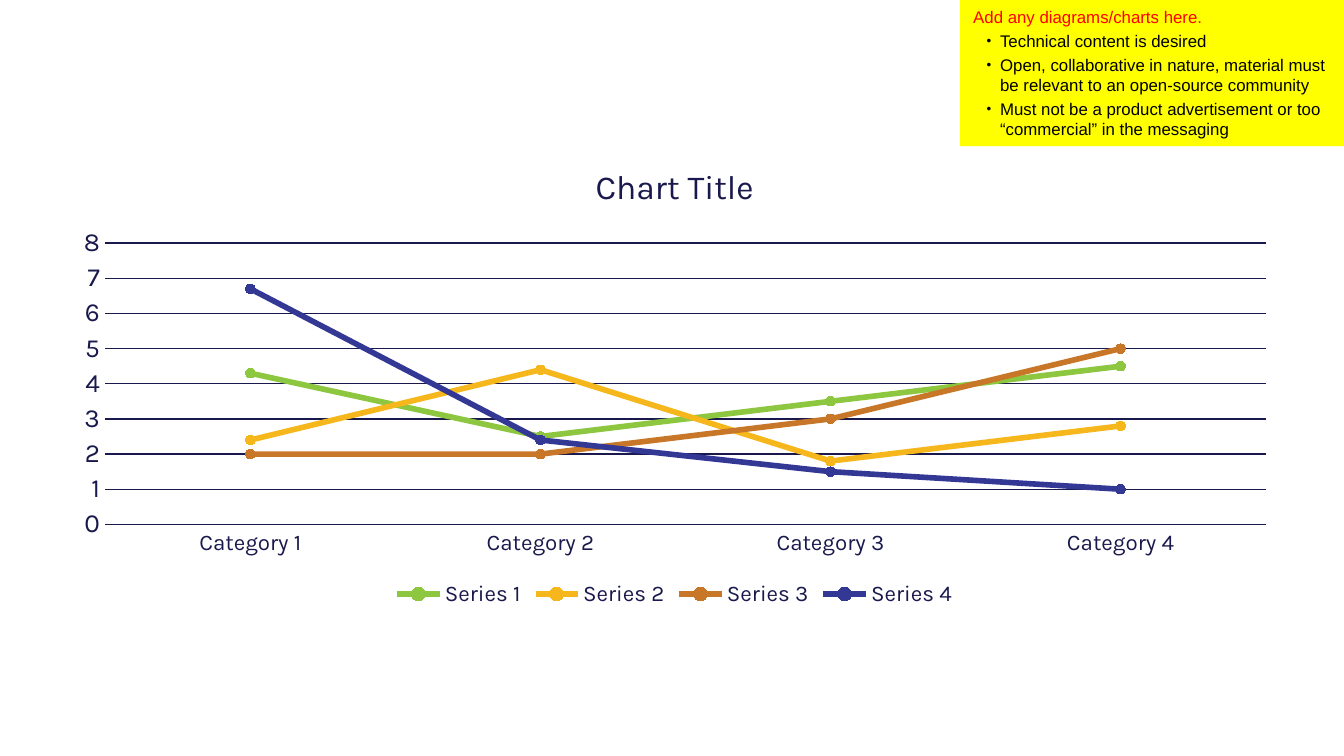
from lxml import etree
from pptx import Presentation
from pptx.chart.data import CategoryChartData
from pptx.dml.color import RGBColor
from pptx.enum.chart import XL_CHART_TYPE, XL_LEGEND_POSITION, XL_MARKER_STYLE, XL_TICK_MARK
from pptx.enum.shapes import MSO_SHAPE
from pptx.enum.text import MSO_ANCHOR, PP_ALIGN
from pptx.oxml.ns import qn
from pptx.util import Pt

LINE_MARKERS = XL_CHART_TYPE.LINE_MARKERS
LEGEND_BOTTOM = XL_LEGEND_POSITION.BOTTOM
CIRCLE = XL_MARKER_STYLE.CIRCLE
NO_TICK = XL_TICK_MARK.NONE
RECTANGLE = MSO_SHAPE.RECTANGLE
TOP = MSO_ANCHOR.TOP
LEFT = PP_ALIGN.LEFT

NAVY = RGBColor(0x19, 0x19, 0x4D)
GREEN = RGBColor(0x8D, 0xC6, 0x3F)
AMBER = RGBColor(0xF6, 0xB7, 0x1C)
COPPER = RGBColor(0xC8, 0x77, 0x28)
INDIGO = RGBColor(0x34, 0x38, 0x95)
YELLOW = RGBColor(0xFF, 0xFF, 0x00)
RED = RGBColor(0xFF, 0x00, 0x00)
BLACK = RGBColor(0x00, 0x00, 0x00)

CATEGORIES = ["Category 1", "Category 2", "Category 3", "Category 4"]
SERIES = [
    ("Series 1", (4.3, 2.5, 3.5, 4.5), GREEN),
    ("Series 2", (2.4, 4.4, 1.8, 2.8), AMBER),
    ("Series 3", (2, 2, 3, 5), COPPER),
    ("Series 4", (6.7, 2.4, 1.5, 1), INDIGO),
]
NOTE_HEADING = "Add any diagrams/charts here."
NOTE_BULLETS = [
    "Technical content is desired",
    "Open, collaborative in nature, material must be relevant to an open-source community",
    "Must not be a product advertisement or too “commercial” in the messaging",
]


def style_font(font, name, size, color):
    font.name = name
    font.size = Pt(size)
    font.bold = False
    font.color.rgb = color


def add_bullet(paragraph):
    properties = paragraph._p.get_or_add_pPr()
    properties.set("marL", str(Pt(14.4)))
    properties.set("indent", str(Pt(-7.2)))
    bullet_color = etree.SubElement(properties, qn("a:buClr"))
    etree.SubElement(bullet_color, qn("a:srgbClr"), val=str(BLACK))
    etree.SubElement(properties, qn("a:buSzPct"), val="80000")
    etree.SubElement(properties, qn("a:buFont"), typeface="Arial")
    etree.SubElement(properties, qn("a:buChar"), char="•")


presentation = Presentation()
presentation.slide_width = Pt(720)
presentation.slide_height = Pt(405)
slide = presentation.slides.add_slide(presentation.slide_layouts[6])

# Line chart
chart_data = CategoryChartData()
chart_data.categories = CATEGORIES
for name, values, color in SERIES:
    chart_data.add_series(name, values)
chart = slide.shapes.add_chart(
    LINE_MARKERS, Pt(31.7), Pt(76.3), Pt(659.5), Pt(252), chart_data
).chart
style_font(chart.font, "Karla", 12, NAVY)

chart.has_title = True
title_frame = chart.chart_title.text_frame
title_frame.text = "Chart Title"
style_font(title_frame.paragraphs[0].runs[0].font, "Karla", 18, NAVY)
chart.chart_title.include_in_layout = False

chart.has_legend = True
chart.legend.position = LEGEND_BOTTOM
chart.legend.include_in_layout = False
style_font(chart.legend.font, "Karla", 12, NAVY)

for axis, size in ((chart.category_axis, 12), (chart.value_axis, 14)):
    axis.major_tick_mark = NO_TICK
    axis.minor_tick_mark = NO_TICK
    style_font(axis.tick_labels.font, "Karla", size, NAVY)

value_axis = chart.value_axis
value_axis.minimum_scale = 0
value_axis.maximum_scale = 8
value_axis.major_unit = 1
value_axis.format.line.fill.background()
value_axis.has_major_gridlines = True
for line in (chart.category_axis.format.line, value_axis.major_gridlines.format.line):
    line.color.rgb = NAVY
    line.width = Pt(0.75)

for series, (name, values, color) in zip(chart.plots[0].series, SERIES):
    series.smooth = False
    series.format.line.color.rgb = color
    series.format.line.width = Pt(3)
    marker = series.marker
    marker.style = CIRCLE
    marker.size = 5
    marker.format.fill.solid()
    marker.format.fill.fore_color.rgb = color
    marker.format.line.color.rgb = color

# Yellow guidance note
note = slide.shapes.add_shape(RECTANGLE, Pt(514.3), Pt(0), Pt(205.7), Pt(78.3))
note.shadow.inherit = False
note.fill.solid()
note.fill.fore_color.rgb = YELLOW
note.line.fill.background()
note_frame = note.text_frame
note_frame.word_wrap = True
note_frame.vertical_anchor = TOP
note_frame.text = NOTE_HEADING
heading = note_frame.paragraphs[0]
heading.alignment = LEFT
style_font(heading.runs[0].font, "Arial", 9, RED)
for text in NOTE_BULLETS:
    paragraph = note_frame.add_paragraph()
    paragraph.text = text
    add_bullet(paragraph)
    paragraph.alignment = LEFT
    paragraph.space_before = Pt(2)
    style_font(paragraph.runs[0].font, "Arial", 9, BLACK)

presentation.save("out.pptx")
